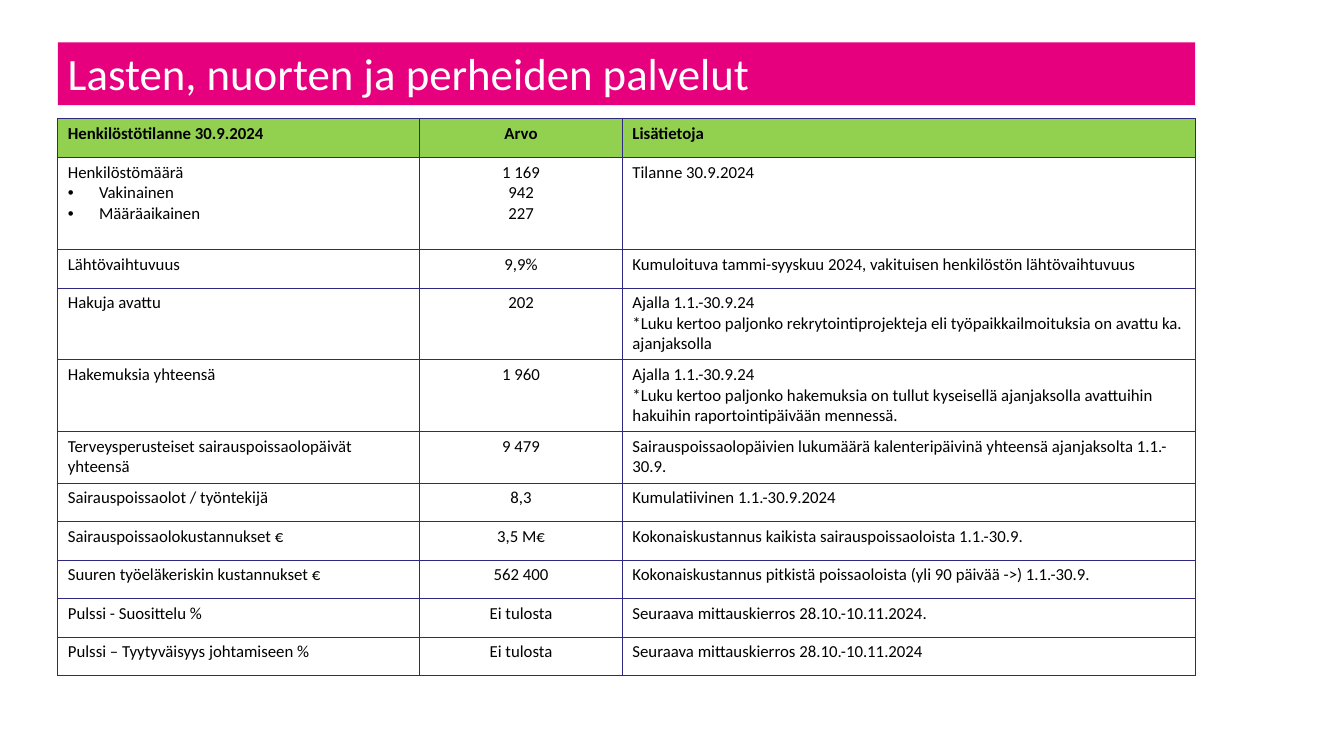
from pptx import Presentation
from pptx.dml.color import RGBColor
from pptx.enum.shapes import MSO_SHAPE
from pptx.enum.text import MSO_ANCHOR, PP_ALIGN
from pptx.oxml.ns import qn
from pptx.util import Inches, Pt
from lxml.etree import SubElement

PINK = RGBColor(0xE6, 0x00, 0x7E)
GREEN = RGBColor(0x92, 0xD0, 0x50)
INDIGO = RGBColor(0x30, 0x27, 0x83)
WHITE = RGBColor(0xFF, 0xFF, 0xFF)
BLACK = RGBColor(0x00, 0x00, 0x00)

# Lengths are percentages of the slide's width or height.
LEFT = 4.3
COLUMNS = [26.93, 15.08, 42.61]
LINE, TWO_LINES, THREE_LINES, STAFF = 5.1, 6.85, 9.45, 12.2
BULLET = "• "

ROWS = [
    (LINE, "Henkilöstötilanne 30.9.2024", "Arvo", "Lisätietoja"),
    (STAFF, "Henkilöstömäärä\n• Vakinainen\n• Määräaikainen",
     "1 169\n942\n227", "Tilanne 30.9.2024"),
    (LINE, "Lähtövaihtuvuus", "9,9%",
     "Kumuloituva tammi-syyskuu 2024, vakituisen henkilöstön lähtövaihtuvuus"),
    (THREE_LINES, "Hakuja avattu", "202",
     "Ajalla 1.1.-30.9.24\v*Luku kertoo paljonko rekrytointiprojekteja eli "
     "työpaikkailmoituksia on avattu ka. ajanjaksolla"),
    (THREE_LINES, "Hakemuksia yhteensä", "1 960",
     "Ajalla 1.1.-30.9.24\n*Luku kertoo paljonko hakemuksia on tullut kyseisellä "
     "ajanjaksolla avattuihin hakuihin raportointipäivään mennessä."),
    (TWO_LINES, "Terveysperusteiset sairauspoissaolopäivät yhteensä", "9 479",
     "Sairauspoissaolopäivien lukumäärä kalenteripäivinä yhteensä "
     "ajanjaksolta 1.1.-30.9."),
    (LINE, "Sairauspoissaolot / työntekijä", "8,3", "Kumulatiivinen 1.1.-30.9.2024"),
    (LINE, "Sairauspoissaolokustannukset €", "3,5 M€",
     "Kokonaiskustannus kaikista sairauspoissaoloista 1.1.-30.9."),
    (LINE, "Suuren työeläkeriskin kustannukset €", "562 400",
     "Kokonaiskustannus pitkistä poissaoloista (yli 90 päivää ->) 1.1.-30.9."),
    (LINE, "Pulssi - Suosittelu %", "Ei tulosta",
     "Seuraava mittauskierros 28.10.-10.11.2024."),
    (LINE, "Pulssi – Tyytyväisyys johtamiseen %", "Ei tulosta",
     "Seuraava mittauskierros 28.10.-10.11.2024"),
]


class SlideBuilder:
    def __init__(self, prs, font="Calibri"):
        self.prs, self.font = prs, font
        self.s = prs.slides.add_slide(prs.slide_layouts[6])

    def x(self, share):
        return round(self.prs.slide_width * share / 100)

    def y(self, share):
        return round(self.prs.slide_height * share / 100)

    def style(self, p, size, color, bold=False, align=PP_ALIGN.LEFT):
        p.alignment = align
        for r in p.runs:
            r.font.name, r.font.size = self.font, Pt(size)
            r.font.bold, r.font.color.rgb = bold, color

    def title(self, text, left, top, width, height):
        sp = self.s.shapes.add_shape(MSO_SHAPE.RECTANGLE, self.x(left), self.y(top),
                                     self.x(width), self.y(height))
        sp.shadow.inherit = False
        sp.fill.solid()
        sp.fill.fore_color.rgb = PINK
        sp.line.fill.background()
        tf = sp.text_frame
        tf.text = text
        tf.vertical_anchor = MSO_ANCHOR.BOTTOM
        p = tf.paragraphs[0]
        p.line_spacing = 0.9
        self.style(p, 32, WHITE)

    def table(self, rows, columns, left, top):
        heights = [row[0] for row in rows]
        table = self.s.shapes.add_table(
            len(rows), len(columns), self.x(left), self.y(top),
            self.x(sum(columns)), self.y(sum(heights))).table
        table.horz_banding = False
        for column, width in zip(table.columns, columns):
            column.width = self.x(width)
        for i, (height, *texts) in enumerate(rows):
            table.rows[i].height = self.y(height)
            for j, text in enumerate(texts):
                self.cell(table.cell(i, j), text, header=i == 0, centred=j == 1)

    def cell(self, cell, text, header, centred):
        self.borders(cell)
        if header:
            cell.fill.solid()
            cell.fill.fore_color.rgb = GREEN
        else:
            cell.fill.background()
        cell.text_frame.text = text
        for p in cell.text_frame.paragraphs:
            if p.text.startswith(BULLET):
                self.bullet(p)
            self.style(p, 12, BLACK, header,
                       PP_ALIGN.CENTER if centred else PP_ALIGN.LEFT)

    def borders(self, cell):
        tcPr = cell._tc.get_or_add_tcPr()
        for side in ("a:lnL", "a:lnR", "a:lnT", "a:lnB"):
            ln = SubElement(tcPr, qn(side), w=str(Pt(0.5)))
            fill = SubElement(ln, qn("a:solidFill"))
            SubElement(fill, qn("a:srgbClr"), val=str(INDIGO))

    def bullet(self, p):
        """Turn a leading bullet mark into a real hanging bullet."""
        p.text = p.text.removeprefix(BULLET)
        pPr = p._p.get_or_add_pPr()
        pPr.set("marL", str(Inches(0.31)))
        pPr.set("indent", str(-Inches(0.31)))
        SubElement(pPr, qn("a:buFont"), typeface="Arial")
        SubElement(pPr, qn("a:buChar"), char=BULLET.strip())


def main():
    prs = Presentation()
    prs.slide_width, prs.slide_height = Inches(13.33), Inches(7.5)
    slide = SlideBuilder(prs)
    slide.title("Lasten, nuorten ja perheiden palvelut", LEFT, 5.6, sum(COLUMNS), 8.3)
    slide.table(ROWS, COLUMNS, LEFT, 15.7)
    prs.save("out.pptx")


if __name__ == "__main__":
    main()
